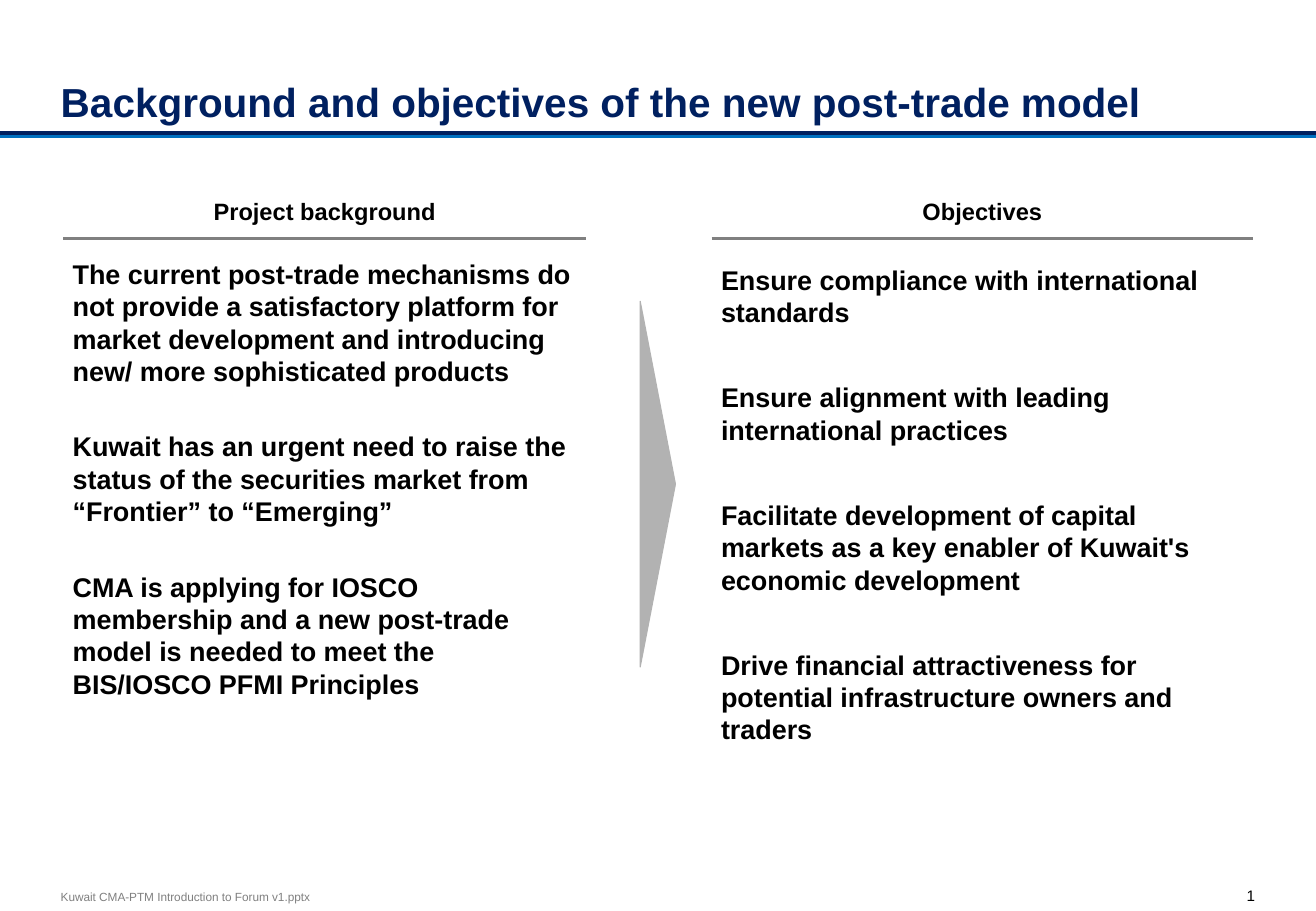
from lxml import etree
from pptx import Presentation
from pptx.dml.color import RGBColor
from pptx.enum.shapes import MSO_CONNECTOR as Connector, MSO_SHAPE as Shape
from pptx.enum.text import MSO_ANCHOR as Anchor, MSO_AUTO_SIZE as AutoSize, PP_ALIGN as Align
from pptx.oxml.ns import qn
from pptx.util import Pt


def write(holder, text, size, color="000000", bold=False, align=Align.LEFT,
          anchor=Anchor.TOP, inset=(0, 0), gap=0):
    frame = holder.text_frame
    frame.word_wrap = True
    frame.auto_size = AutoSize.NONE
    frame.vertical_anchor = anchor
    frame.margin_left = frame.margin_right = Pt(inset[0])
    frame.margin_top = frame.margin_bottom = Pt(inset[1])
    frame.text = text
    for index, paragraph in enumerate(frame.paragraphs):
        paragraph.alignment = align
        paragraph.space_before = Pt(gap if index else 0)
        paragraph.font.name = "Arial"
        paragraph.font.size = Pt(size)
        paragraph.font.bold = bold
        paragraph.font.color.rgb = RGBColor.from_string(color)


def draw_rule(left, y, width, color, weight):
    rule = slide.shapes.add_connector(
        Connector.STRAIGHT, Pt(left), Pt(y), Pt(left + width), Pt(y))
    rule.line.color.rgb = RGBColor.from_string(color)
    rule.line.width = Pt(weight)
    etree.SubElement(rule._element.spPr, qn("a:effectLst"))


deck = Presentation()
deck.slide_width, deck.slide_height = Pt(780), Pt(540)
slide = deck.slides.add_slide(deck.slide_layouts[5])

title = slide.shapes.title
title.left, title.top, title.width, title.height = Pt(36), Pt(12.5), Pt(708), Pt(65.5)
write(title, "Background and objectives of the new post-trade model", 24,
      color="002060", bold=True, anchor=Anchor.BOTTOM, inset=(0, 3.6))

draw_rule(0, 80.9, 780, "0070C0", 2.25)
draw_rule(0, 78.9, 780, "002060", 2.25)

columns = [
    ("Project background", 36, 313, 233, (7.2, 3.6), 25.6, [
        "The current post-trade mechanisms do not provide a satisfactory platform for "
        "market development and introducing new/ more sophisticated products",
        "Kuwait has an urgent need to raise the status of the securities market from "
        "“Frontier” to “Emerging”",
        "CMA is applying for IOSCO membership and a new post-trade model is needed to "
        "meet the BIS/IOSCO PFMI Principles",
    ]),
    ("Objectives", 420.3, 324, 328, (7.2, 7.2), 31.2, [
        "Ensure compliance with international standards",
        "Ensure alignment with leading international practices",
        "Facilitate development of capital markets as a key enabler of Kuwait's "
        "economic development",
        "Drive financial attractiveness for potential infrastructure owners and traders",
    ]),
]
for heading, left, width, height, inset, gap, points in columns:
    header = slide.shapes.add_shape(
        Shape.RECTANGLE, Pt(left), Pt(109), Pt(width), Pt(31.7))
    header.shadow.inherit = False
    header.fill.solid()
    header.fill.fore_color.rgb = RGBColor.from_string("FFFFFF")
    header.line.fill.background()
    write(header, heading, 14, bold=True, align=Align.CENTER,
          anchor=Anchor.BOTTOM, inset=(0, 7.2))
    draw_rule(left + 1.5, 141.4, width - 3, "808080", 2)
    body = slide.shapes.add_textbox(Pt(left), Pt(149), Pt(width), Pt(height))
    write(body, "\n".join(points), 16, bold=True, inset=inset, gap=gap)

pointer = slide.shapes.add_shape(
    Shape.ISOSCELES_TRIANGLE, Pt(281.5), Pt(276.5), Pt(216.7), Pt(20.9))
pointer.rotation = 90
pointer.shadow.inherit = False
pointer.fill.solid()
pointer.fill.fore_color.rgb = RGBColor.from_string("B2B2B2")
pointer.line.color.rgb = RGBColor.from_string("B2B2B2")
pointer.line.width = Pt(0.75)

footer = slide.shapes.add_textbox(Pt(36), Pt(527.3), Pt(300), Pt(8.6))
write(footer, "Kuwait CMA-PTM Introduction to Forum v1.pptx", 7,
      color="808080", anchor=Anchor.MIDDLE)
page_number = slide.shapes.add_textbox(Pt(714), Pt(525.6), Pt(30), Pt(10))
write(page_number, "1", 9, align=Align.RIGHT)

deck.save("out.pptx")
